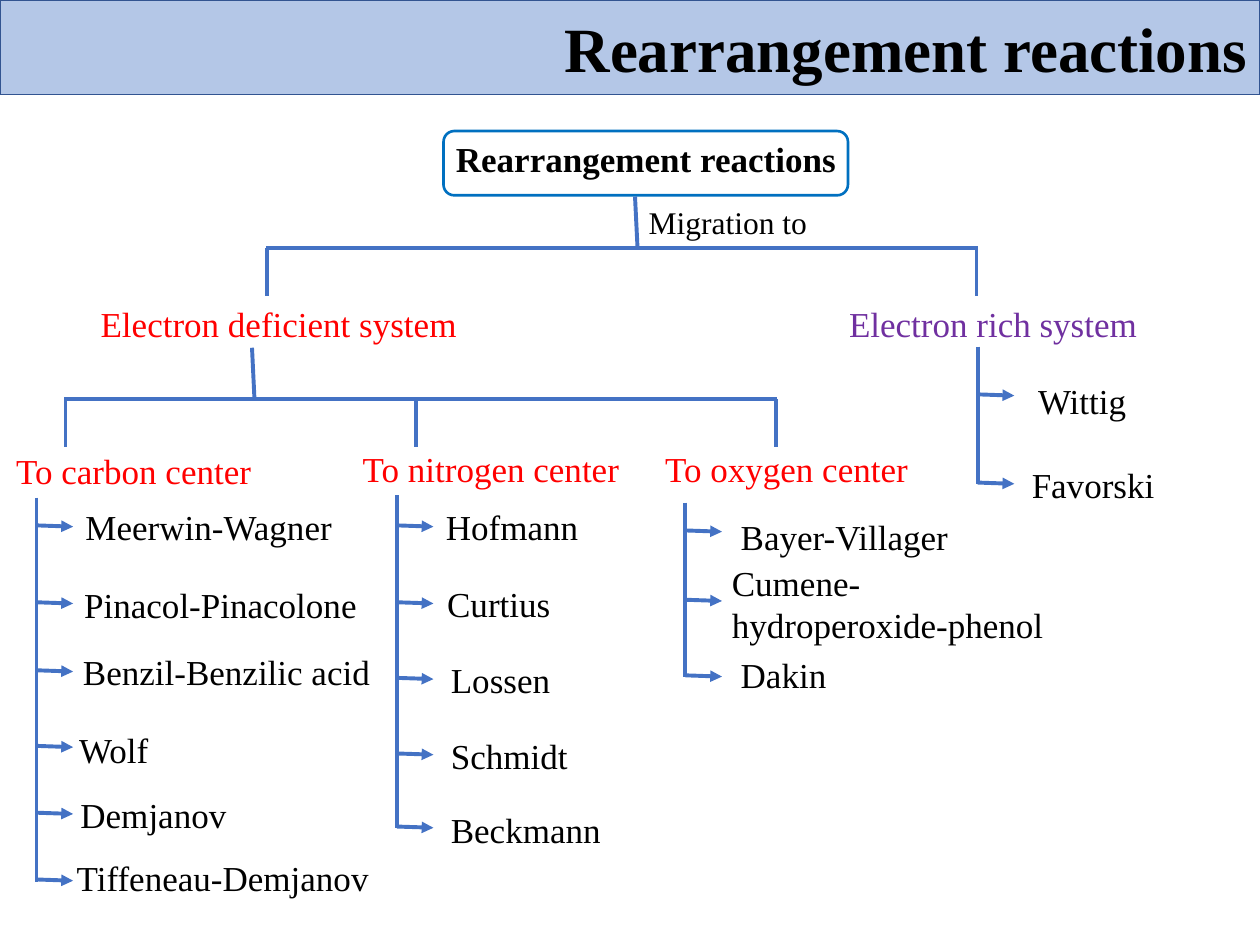
from lxml import etree
from pptx import Presentation
from pptx.dml.color import RGBColor
from pptx.enum.shapes import MSO_CONNECTOR, MSO_SHAPE
from pptx.enum.text import MSO_ANCHOR, MSO_AUTO_SIZE, PP_ALIGN
from pptx.oxml.ns import qn
from pptx.util import Pt

PX = 9144  # 100 px to the inch
FONT = "Times New Roman"
STRAIGHT = MSO_CONNECTOR.STRAIGHT
ROUNDED = MSO_SHAPE.ROUNDED_RECTANGLE
MIDDLE = MSO_ANCHOR.MIDDLE
RIGHT = PP_ALIGN.RIGHT
FIXED, GROW = MSO_AUTO_SIZE.NONE, MSO_AUTO_SIZE.SHAPE_TO_FIT_TEXT

COLORS = {
    "band": "B4C7E7", "edge": "325491", "frame": "0070C0", "line": "4472C4",
    "black": "000000", "red": "FF0000", "purple": "7030A0",
}

# text, left, top, width, color
HEADS = [
    ("Electron rich system", 664, 235, 273, "purple"),
    ("Electron deficient system", 70, 235, 359, "red"),
    ("To carbon center", 3, 352, 281, "red"),
    ("To nitrogen center", 278, 350, 281, "red"),
    ("To oxygen center", 518, 350, 281, "red"),
]

# stem x, top, bottom, then items: text, left, top, width, arrow y
LISTS = [
    (776, 275, 384, [
        ("Wittig", 814, 296, 128, 313),
        ("Favorski", 809, 363, 128, 383),
    ]),
    (544, 399, 537, [
        ("Bayer-Villager", 578, 404, 209, 421),
        ("Cumene-hydroperoxide-phenol", 571, 441, 289, 476),
        ("Dakin", 578, 514, 128, 536),
    ]),
    (315, 393, 657, [
        ("Hofmann", 344, 396, 128, 417),
        ("Curtius", 345, 457, 128, 478),
        ("Lossen", 348, 518, 128, 538),
        ("Schmidt", 348, 578, 128, 598),
        ("Beckmann", 348, 637, 170, 656),
    ]),
    (29, 395, 700, [
        ("Meerwin-Wagner", 58, 396, 221, 417),
        ("Pinacol-Pinacolone", 57, 458, 256, 478),
        ("Benzil-Benzilic acid", 56, 511, 262, 532),
        ("Wolf", 53, 573, 204, 592),
        ("Demjanov", 54, 625, 204, 645),
        ("Tiffeneau-Demjanov", 51, 675, 262, 698),
    ]),
]


def px(*nums):
    return [n * PX for n in nums]


def rgb(name):
    return RGBColor.from_string(COLORS[name])


def style(para, size, color="black", bold=False):
    font = para.font
    font.name, font.size, font.bold = FONT, Pt(size), bold
    font.color.rgb = rgb(color)


def add_title(slide, text):
    title = slide.shapes.title
    title.left, title.top, title.width, title.height = px(0, 0, 1000, 75)
    title.fill.solid()
    title.fill.fore_color.rgb = rgb("band")
    title.line.color.rgb = rgb("edge")
    title.line.width = Pt(1)
    frame = title.text_frame
    frame.text = text
    frame.auto_size = FIXED
    frame.vertical_anchor = MIDDLE
    para = frame.paragraphs[0]
    para.alignment = RIGHT
    style(para, 36, bold=True)


def add_text(slide, text, left, top, width, color="black",
             height=44, size=20, bold=False, wrap=True):
    box = slide.shapes.add_textbox(*px(left, top, width, height))
    frame = box.text_frame
    frame.word_wrap = wrap
    frame.auto_size = GROW
    frame.text = text
    style(frame.paragraphs[0], size, color, bold)


def add_frame(slide, *place):
    box = slide.shapes.add_shape(ROUNDED, *px(*place))
    box.shadow.inherit = False
    box.fill.background()
    box.line.color.rgb = rgb("frame")
    box.line.width = Pt(1.5)


def add_line(slide, *ends, arrow=False):
    line = slide.shapes.add_connector(STRAIGHT, *px(*ends))
    line.line.color.rgb = rgb("line")
    line.line.width = Pt(2.25)
    props = line.element.spPr
    if arrow:
        tail = etree.SubElement(props.find(qn("a:ln")), qn("a:tailEnd"))
        tail.set("type", "triangle")
    etree.SubElement(props, qn("a:effectLst"))


def add_fork(slide, stem, top, bar, drops):
    """Draw a stem down to a bar, with a drop to each child."""
    add_line(slide, stem, top, stem + 2, bar)
    add_line(slide, drops[0] - 1, bar, drops[-1] + 1, bar)
    for x in drops:
        add_line(slide, x, bar, x, bar + 38)


def add_list(slide, x, top, bottom, items):
    """Draw a stem with an arrow to each named reaction."""
    add_line(slide, x, top, x, bottom)
    for text, left, y, width, mid in items:
        add_line(slide, x, mid, x + 29, mid + 1, arrow=True)
        add_text(slide, text, left, y, width,
                 height=77 if "Cumene" in text else 44)


def main():
    deck = Presentation()
    deck.slide_width, deck.slide_height = px(1000, 750)
    slide = deck.slides.add_slide(deck.slide_layouts[5])
    add_title(slide, "Rearrangement reactions")
    add_text(slide, "Rearrangement reactions", 352, 104, 324,
             bold=True, wrap=False)
    add_frame(slide, 352, 104, 321, 51)
    add_fork(slide, 504, 156, 197, [212, 775])
    add_text(slide, "Migration to", 505, 156, 199, height=40, size=18)
    add_fork(slide, 200, 276, 317, [52, 330, 616])
    for head in HEADS:
        add_text(slide, *head)
    for branch in LISTS:
        add_list(slide, *branch)
    deck.save("out.pptx")


if __name__ == "__main__":
    main()
